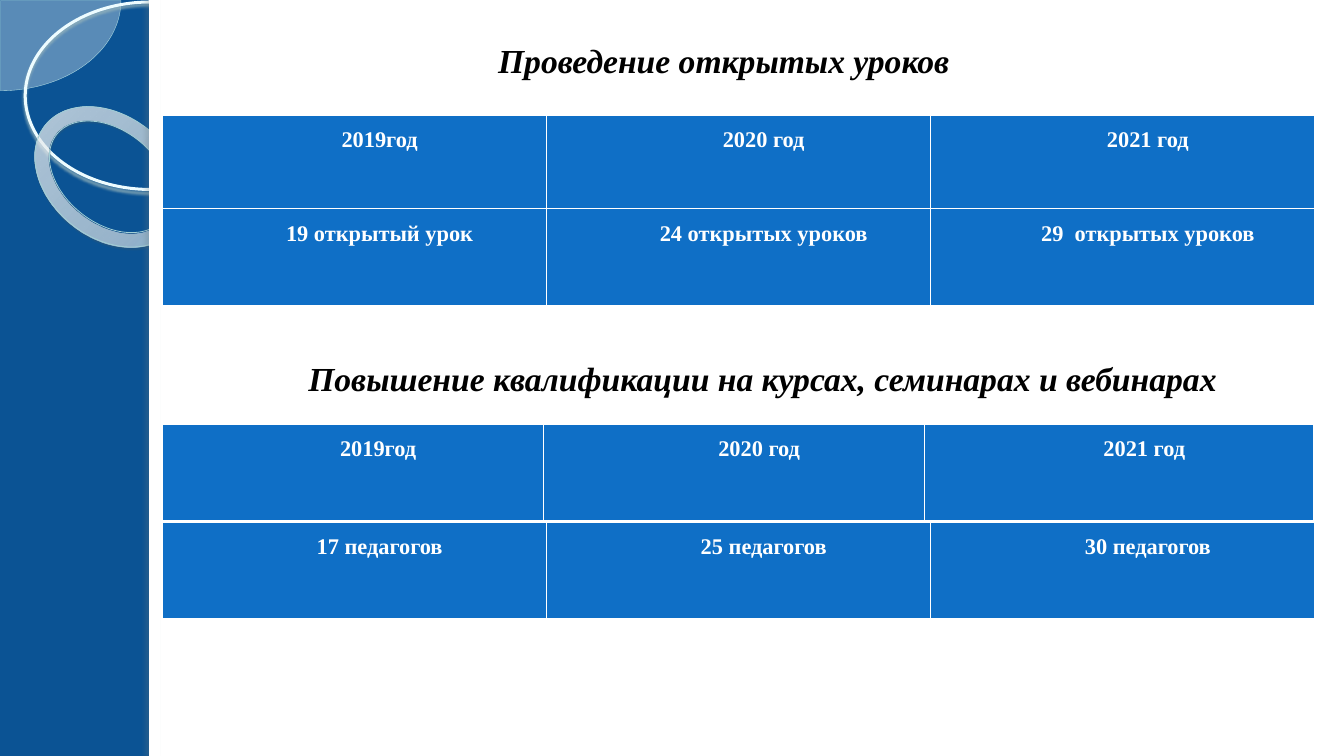
"""Build a slide with two yearly summaries of teaching work."""
from pptx import Presentation
from pptx.dml.color import RGBColor
from pptx.enum import shapes, text
from pptx.oxml import ns, parse_xml
from pptx.util import Inches, Pt

WHITE = RGBColor(0xFF, 0xFF, 0xFF)
BLACK = RGBColor(0x00, 0x00, 0x00)
NAVY = RGBColor(0x0B, 0x53, 0x94)
BLUE = RGBColor(0x0F, 0x6F, 0xC6)
ICE = RGBColor(0xF8, 0xFE, 0xFF)
PIE_EDGE = RGBColor(0xAF, 0xDB, 0xE2)
RING_EDGE = RGBColor(0xED, 0xFC, 0xFF)
DONUT_EDGE = RGBColor(0xA1, 0xCF, 0xD6)
RING_SHADE = RGBColor(0x9C, 0xB9, 0xBE)
DONUT_SHADE = RGBColor(0x4B, 0x5E, 0x61)
EDGE_SHADE = RGBColor(0x6C, 0x7A, 0x7C)
DONUT_STOPS = [(0, RGBColor(0xF9, 0xFE, 0xFF), 70),
               (70, RGBColor(0xFD, 0xFF, 0xFF), 55),
               (100, RGBColor(0x9E, 0xF2, 0xFF), 60)]

KIND = shapes.MSO_SHAPE
DECORATIONS = [
    dict(kind=KIND.PIE, at=(-1.19, -0.89, 2.39, 1.79), adjust=(0, 54.02),
         fill=ICE, alpha=33, line=(PIE_EDGE, 0.25)),
    dict(kind=KIND.OVAL, at=(0.25, 0.02, 2.48, 1.86),
         line=(RING_EDGE, 2.15), shadow=(RING_SHADE, 85, 2, 2, 90)),
    dict(kind=KIND.DONUT, at=(0.27, 1.15, 1.64, 1.21), adjust=(0.12,),
         turn=38.6, stops=DONUT_STOPS, line=(DONUT_EDGE, 0.58),
         shadow=(DONUT_SHADE, 35, 1, 1.2, 75)),
    dict(kind=KIND.RECTANGLE, at=(1.48, 0, 11.86, 7.5), fill=WHITE),
    dict(kind=KIND.RECTANGLE, at=(1.48, 0, 0.11, 7.5), fill=WHITE,
         shadow=(EDGE_SHADE, 25, 3, 3, 180)),
]

LESSONS = "Проведение открытых уроков"
COURSES = "Повышение квалификации на курсах, семинарах и вебинарах"
YEARS = ["2019год", "2020 год", "2021 год"]
EVEN = (3.81, 3.81, 3.81)
TABLES = [
    (1.14, 0.98, EVEN, YEARS),
    (2.07, 0.97, EVEN,
     ["19 открытый урок", "24 открытых уроков", "29  открытых уроков"]),
    (4.21, 0.97, (3.78, 3.78, 3.86), YEARS),
    (5.18, 0.97, EVEN, ["17 педагогов", "25 педагогов", "30 педагогов"]),
]
TABLE_LEFT = 1.61
BORDERS = {"lnL": 1, "lnR": 1, "lnT": 1, "lnB": 3}
HEADING = dict(name="Times New Roman", size=Pt(24), bold=True, italic=True)
CELL = dict(name="Times New Roman", size=Pt(16), bold=True, italic=False)
MARGINS = dict(margin_left=Inches(0.07), margin_right=Inches(0.07),
               margin_top=0, margin_bottom=0)


def assign(target, values):
    for name, value in values.items():
        setattr(target, name, value)


def write(frame, words, font, color, align, spacing):
    para = frame.paragraphs[0]
    assign(para, dict(alignment=align, line_spacing=spacing))
    span = para.add_run()
    span.text = words
    assign(span.font, font)
    span.font.color.rgb = color
    return para


def color_xml(color, alpha=100):
    return f'<a:srgbClr val="{color}"><a:alpha val="{alpha * 1000}"/></a:srgbClr>'


def decorate(page, kind, at, fill=None, alpha=100, stops=None, line=None,
             shadow=None, adjust=(), turn=0):
    shape = page.shapes.add_shape(kind, *map(Inches, at))
    shape.rotation = turn
    shape.shadow.inherit = False
    for index, value in enumerate(adjust):
        shape.adjustments[index] = value
    props = shape._element.spPr
    if stops:
        shape.fill.gradient()
        marks = "".join(f'<a:gs pos="{place * 1000}">{color_xml(color, opacity)}</a:gs>'
                        for place, color, opacity in stops)
        props.replace(props.find(ns.qn("a:gradFill")), parse_xml(
            f'<a:gradFill {ns.nsdecls("a")}><a:gsLst>{marks}</a:gsLst>'
            '<a:path path="circle"><a:fillToRect l="-408000" t="-50000" '
            'r="508000" b="150000"/></a:path></a:gradFill>'))
    elif fill is not None:
        shape.fill.solid()
        shape.fill.fore_color.rgb = fill
        if alpha < 100:
            solid = props.find(ns.qn("a:solidFill"))
            solid.replace(solid[0], parse_xml(color_xml(fill, alpha).replace(
                "<a:srgbClr", f'<a:srgbClr {ns.nsdecls("a")}', 1)))
    else:
        shape.fill.background()
    if line:
        shape.line.color.rgb, shape.line.width = line[0], Pt(line[1])
    else:
        shape.line.fill.background()
    if shadow:
        color, opacity, blur, distance, angle = shadow
        props.find(ns.qn("a:effectLst")).append(parse_xml(
            f'<a:outerShdw {ns.nsdecls("a")} blurRad="{Pt(blur)}" '
            f'dist="{Pt(distance)}" dir="{angle * 60000}" algn="tl" '
            f'rotWithShape="0">{color_xml(color, opacity)}</a:outerShdw>'))


def add_row(page, top, height, widths, words):
    table = page.shapes.add_table(1, len(words), Inches(TABLE_LEFT), Inches(top),
                                  Inches(sum(widths)), Inches(height)).table
    assign(table, dict(first_row=False, horz_banding=False))
    for column, width in zip(table.columns, widths):
        column.width = Inches(width)
    for cell, label in zip(table.rows[0].cells, words):
        assign(cell, MARGINS)
        para = write(cell.text_frame, label, CELL, WHITE, text.PP_ALIGN.CENTER, 1.5)
        indent = para._p.get_or_add_pPr()
        indent.set("marL", str(Inches(0.5)))
        indent.set("indent", "0")
        props = cell._tc.get_or_add_tcPr()
        for side, weight in BORDERS.items():
            props.append(parse_xml(
                f'<a:{side} {ns.nsdecls("a")} w="{Pt(weight)}"><a:solidFill>'
                f'{color_xml(WHITE)}</a:solidFill></a:{side}>'))
        cell.fill.solid()
        cell.fill.fore_color.rgb = BLUE


def main():
    deck = Presentation()
    deck.slide_width, deck.slide_height = Inches(13.33), Inches(7.5)
    page = deck.slides.add_slide(deck.slide_layouts[5])
    page.background.fill.solid()
    page.background.fill.fore_color.rgb = NAVY
    for decoration in DECORATIONS:
        decorate(page, **decoration)

    title = page.shapes.title
    assign(title, dict(left=Inches(4.84), top=Inches(0.4),
                       width=Inches(4.96), height=Inches(0.62)))
    assign(title.text_frame, dict(vertical_anchor=text.MSO_ANCHOR.TOP, margin_top=0,
                                  word_wrap=True, auto_size=text.MSO_AUTO_SIZE.NONE))
    write(title.text_frame, LESSONS, HEADING, BLACK, text.PP_ALIGN.LEFT, 1.0)
    page.shapes._spTree.append(title._element)

    box = page.shapes.add_textbox(*map(Inches, (2.96, 3.3, 9.63, 0.64)))
    box.text_frame.word_wrap = True
    write(box.text_frame, COURSES, HEADING, BLACK, text.PP_ALIGN.JUSTIFY, 1.5)

    for row in TABLES:
        add_row(page, *row)
    deck.save("out.pptx")


if __name__ == "__main__":
    main()
